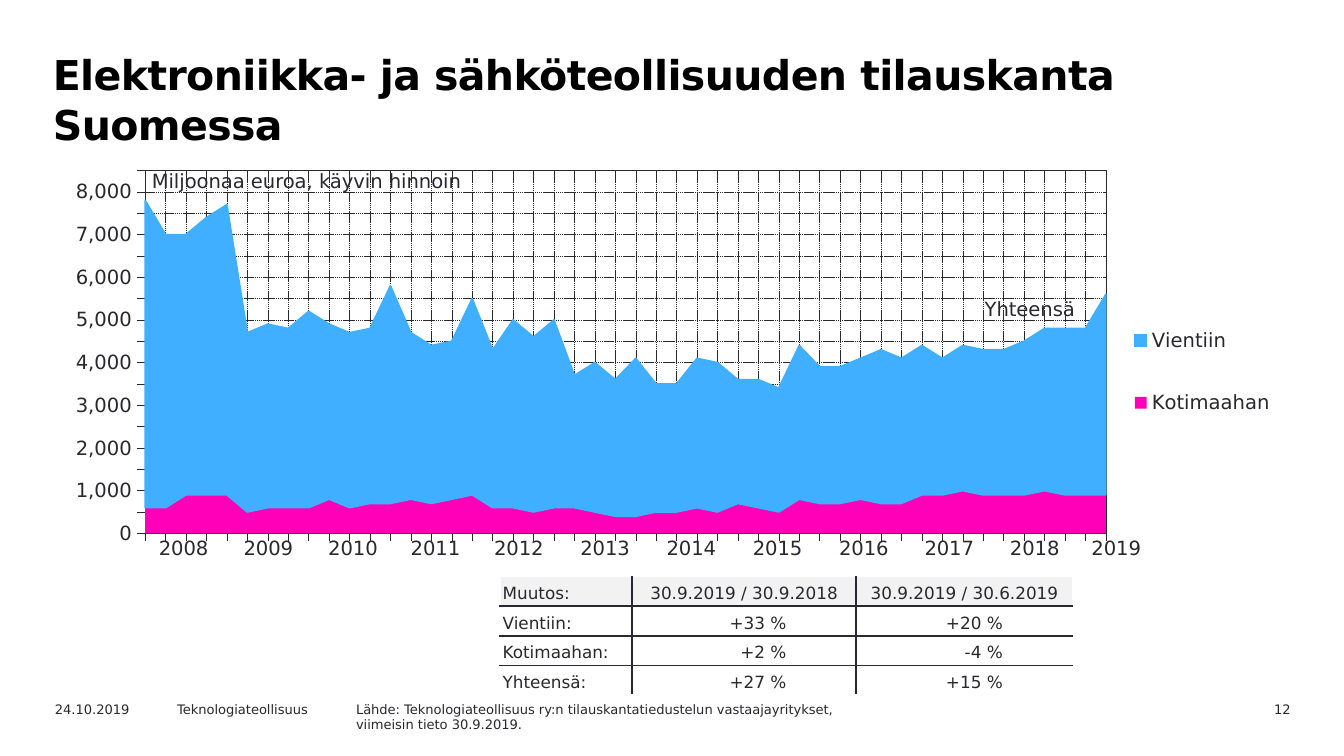
from lxml import etree
from pptx import Presentation
from pptx.chart.data import CategoryChartData
from pptx.dml.color import RGBColor
from pptx.enum.chart import XL_CHART_TYPE, XL_LEGEND_POSITION, XL_TICK_LABEL_POSITION, XL_TICK_MARK
from pptx.enum.dml import MSO_LINE
from pptx.enum.text import MSO_ANCHOR, PP_ALIGN
from pptx.oxml.ns import qn
from pptx.util import Cm, Pt

AREA = XL_CHART_TYPE.AREA_STACKED
LEGEND_RIGHT = XL_LEGEND_POSITION.RIGHT
NO_LABELS = XL_TICK_LABEL_POSITION.NONE
OUTSIDE = XL_TICK_MARK.OUTSIDE
DASH = MSO_LINE.SQUARE_DOT
BOTTOM = MSO_ANCHOR.BOTTOM
LEFT, CENTER, RIGHT = PP_ALIGN.LEFT, PP_ALIGN.CENTER, PP_ALIGN.RIGHT

THEME = {
    "font": "DejaVu Sans",
    "ink": "29282E", "black": "000000", "white": "FFFFFF", "header": "F2F2F2",
    "domestic": "FF00B8", "export": "40AFFF",
    "title": 22, "label": 10.5, "table": 9, "footer": 7,
}
NO_STYLE = "{2D5ABB26-0587-4C30-8999-92F81FD0307C}"

TITLE = "Elektroniikka- ja sähköteollisuuden tilauskanta Suomessa"
FOOTERS = [
    (["24.10.2019"], 0.79, 2.54, LEFT),
    (["Teknologiateollisuus"], 3.1, 3.61, LEFT),
    (["Lähde: Teknologiateollisuus ry:n tilauskantatiedustelun vastaajayritykset,",
      "viimeisin tieto 30.9.2019."], 6.48, 12.7, LEFT),
    (["12"], 22.25, 2.39, RIGHT),
]
CHART_LABELS = [
    ("Miljoonaa euroa, käyvin hinnoin", 2.62, 3.07, 6.6),
    ("Yhteensä", 18.36, 5.49, 2.69),
]
SERIES = [
    ("Kotimaahan", "domestic", [
        600, 600, 900, 900, 900, 500, 600, 600, 600, 800, 600, 700,
        700, 800, 700, 800, 900, 600, 600, 500, 600, 600, 500, 400,
        400, 500, 500, 600, 500, 700, 600, 500, 800, 700, 700, 800,
        700, 700, 900, 900, 1000, 900, 900, 900, 1000, 900, 900, 900]),
    ("Vientiin", "export", [
        7200, 6400, 6100, 6500, 6800, 4200, 4300, 4200, 4600, 4100, 4100, 4100,
        5100, 3900, 3700, 3700, 4600, 3700, 4400, 4100, 4400, 3100, 3500, 3200,
        3700, 3000, 3000, 3500, 3500, 2900, 3000, 2900, 3600, 3200, 3200, 3300,
        3600, 3400, 3500, 3200, 3400, 3400, 3400, 3600, 3800, 3900, 3900, 4700]),
]
PLOT_LAYOUT = {"x": 0.075, "y": 0.029, "w": 0.777, "h": 0.885}
LEGEND_LAYOUT = {"x": 0.86, "y": 0.32, "w": 0.14, "h": 0.4}
YEARS = [str(year) for year in range(2008, 2020)]
YEAR_WIDTHS = [1.6, 1.6, 1.6, 1.52] + [1.63] * 5 + [1.6, 1.63, 1.45]
CHANGES = [
    ("Muutos:", "30.9.2019 / 30.9.2018", "30.9.2019 / 30.6.2019"),
    ("Vientiin:", "+33 %", "+20 %"),
    ("Kotimaahan:", "+2 %", "-4 %"),
    ("Yhteensä:", "+27 %", "+15 %"),
]
CHANGE_WIDTHS = [2.49, 4.24, 4.09]


def color(name):
    return RGBColor.from_string(THEME[name])


def set_font(font, size, ink="ink", bold=False):
    font.name, font.size, font.bold = THEME["font"], Pt(THEME[size]), bold
    font.color.rgb = color(ink)


def add_text(s, lines, left, top, width, height, size, align=LEFT, ink="ink", bold=False):
    tf = s.shapes.add_textbox(Cm(left), Cm(top), Cm(width), Cm(height)).text_frame
    tf.word_wrap = True
    for i, line in enumerate(lines):
        p = tf.paragraphs[0] if i == 0 else tf.add_paragraph()
        p.text, p.alignment = line, align
        set_font(p.font, size, ink, bold)
    return tf


def set_line(line, width, ink="ink"):
    line.color.rgb, line.width = color(ink), Pt(width)


def set_layout(parent, index, values, inner=False):
    layout = parent.find(qn("c:layout"))
    if layout is None:
        layout = etree.Element(qn("c:layout"))
        parent.insert(index, layout)
    manual = etree.SubElement(layout, qn("c:manualLayout"))
    if inner:
        etree.SubElement(manual, qn("c:layoutTarget"), val="inner")
    for key in "xy":
        etree.SubElement(manual, qn(f"c:{key}Mode"), val="edge")
    for key, value in values.items():
        etree.SubElement(manual, qn(f"c:{key}"), val=str(value))


def add_line_xml(parent, tag, ink, width):
    ln = etree.SubElement(parent, qn(tag), w=str(Pt(width)))
    fill = etree.SubElement(ln, qn("a:solidFill"))
    etree.SubElement(fill, qn("a:srgbClr"), val=THEME[ink])


def add_order_chart(s):
    data = CategoryChartData()
    data.categories = [str(i + 1) for i in range(len(SERIES[0][2]))]
    for name, _, values in SERIES:
        data.add_series(name, values)
    chart = s.shapes.add_chart(AREA, Cm(0.99), Cm(3), Cm(23.37), Cm(7.75), data).chart
    chart.has_title = False
    set_font(chart.font, "label")
    chart.plots[0].vary_by_categories = False
    for series, (_, ink, _) in zip(chart.plots[0].series, SERIES):
        series.format.fill.solid()
        series.format.fill.fore_color.rgb = color(ink)
    set_line(series.format.line, 0.88, ink)

    for axis in (chart.category_axis, chart.value_axis):
        axis.major_tick_mark = OUTSIDE
        axis.has_major_gridlines = True
        set_line(axis.format.line, 0.22)
        grid = axis.major_gridlines.format.line
        set_line(grid, 0.25)
        grid.dash_style = DASH
    chart.category_axis.tick_label_position = NO_LABELS
    axis = chart.value_axis
    axis.minimum_scale, axis.maximum_scale, axis.major_unit = 0, 8500, 500
    axis.tick_labels.number_format = "#,##0"
    axis.tick_labels.number_format_is_linked = False
    set_font(axis.tick_labels.font, "label")

    chart.has_legend = True
    legend = chart.legend
    legend.position, legend.include_in_layout = LEGEND_RIGHT, False
    set_font(legend.font, "label")
    set_layout(legend._element, 1, LEGEND_LAYOUT)
    plot_area = chart._chartSpace.chart.plotArea
    set_layout(plot_area, 0, PLOT_LAYOUT, inner=True)
    frame = etree.SubElement(plot_area, qn("c:spPr"))
    etree.SubElement(frame, qn("a:noFill"))
    add_line_xml(frame, "a:ln", "ink", 0.25)


def add_plain_table(s, rows, widths, left, top, row_height):
    shape = s.shapes.add_table(len(rows), len(widths), Cm(left), Cm(top),
                               Cm(sum(widths)), Cm(row_height * len(rows)))
    table = shape.table
    table.first_row = table.horz_banding = False
    table._tbl.tblPr.find(qn("a:tableStyleId")).text = NO_STYLE
    for column, width in zip(table.columns, widths):
        column.width = Cm(width)
    for row, texts in zip(table.rows, rows):
        row.height = Cm(row_height)
        for cell, text in zip(row.cells, texts):
            cell.text = text
    return table


def add_years(s):
    table = add_plain_table(s, [YEARS], YEAR_WIDTHS, 2.67, 10.03, 0.79)
    for cell in table.iter_cells():
        cell.fill.background()
        p = cell.text_frame.paragraphs[0]
        p.alignment = CENTER
        set_font(p.font, "label")


def add_changes(s):
    table = add_plain_table(s, CHANGES, CHANGE_WIDTHS, 9.45, 10.9, 0.56)
    last_row, last_col = len(CHANGES) - 1, len(CHANGE_WIDTHS) - 1
    for r in range(last_row + 1):
        for c in range(last_col + 1):
            cell = table.cell(r, c)
            is_value = r > 0 and c > 0
            cell.margin_left = cell.margin_top = cell.margin_bottom = Cm(0.05)
            cell.margin_right = Cm(1.32 if is_value else 0.05)
            cell.vertical_anchor = BOTTOM
            p = cell.text_frame.paragraphs[0]
            p.alignment = RIGHT if is_value else CENTER if c else LEFT
            set_font(p.font, "table")
            outer = {"L": c == 0, "R": c == last_col, "T": r == 0, "B": r == last_row}
            for side, is_outer in outer.items():
                add_line_xml(cell._tc.get_or_add_tcPr(), f"a:ln{side}",
                             "white" if is_outer else "ink", 1)
            cell.fill.solid()
            cell.fill.fore_color.rgb = color("white" if r else "header")


def main():
    prs = Presentation()
    prs.slide_width, prs.slide_height = Cm(25.4), Cm(14.29)
    s = prs.slides.add_slide(prs.slide_layouts[6])
    tf = add_text(s, [TITLE], 0.75, 0.79, 22.16, 1.8, "title", ink="black", bold=True)
    p = tf.paragraphs[0]
    p.line_spacing = Pt(27)
    p.runs[0].font._element.set("spc", "-30")
    for lines, left, width, align in FOOTERS:
        add_text(s, lines, left, 13.13, width, 0.46, "footer", align)
    add_order_chart(s)
    for text, left, top, width in CHART_LABELS:
        add_text(s, [text], left, top, width, 0.69, "label")
    add_changes(s)
    add_years(s)
    prs.save("out.pptx")


if __name__ == "__main__":
    main()
